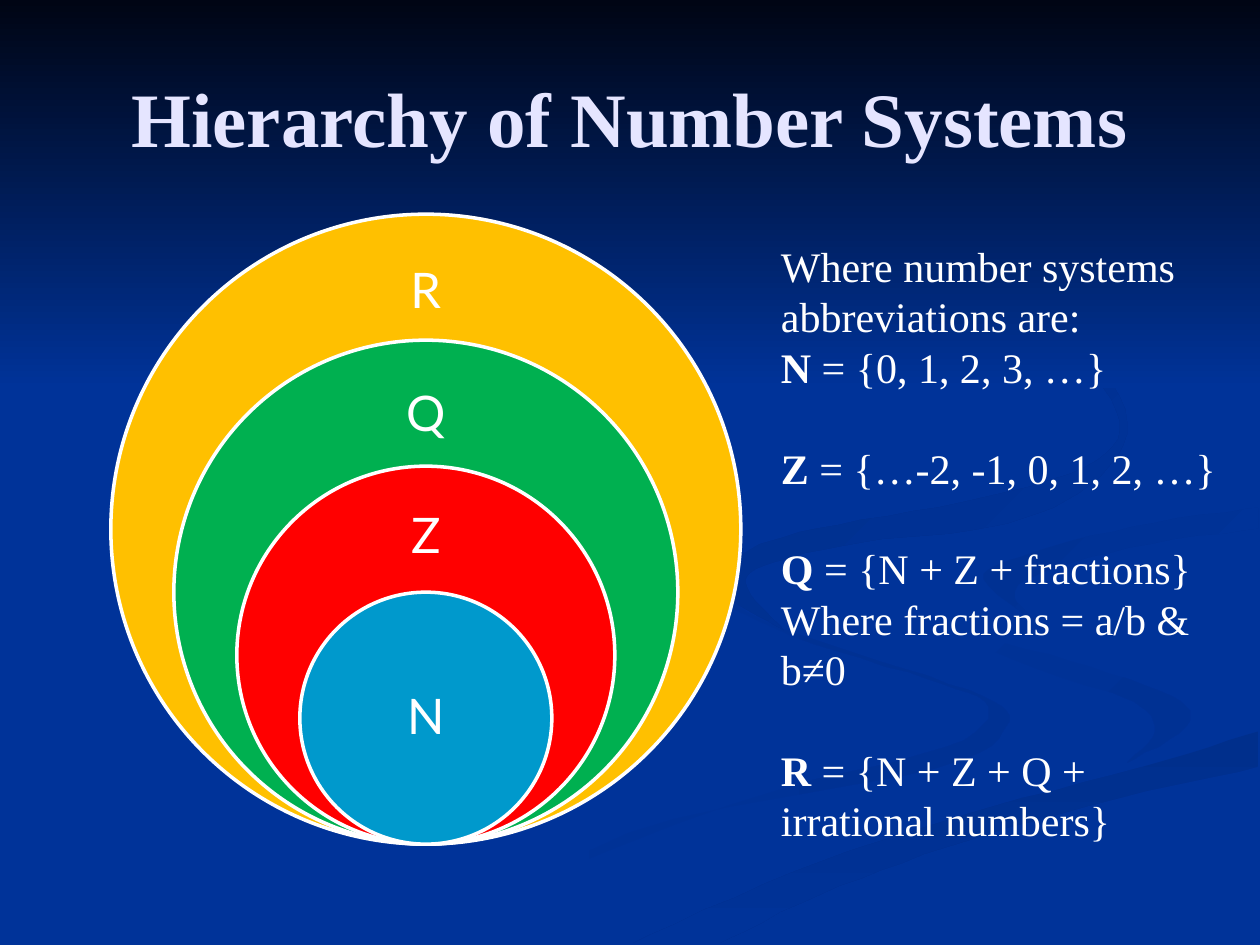
from pptx import Presentation
from pptx.dml.color import RGBColor as Rgb
from pptx.enum.shapes import MSO_SHAPE as Kind
from pptx.enum.text import MSO_ANCHOR as Anchor, PP_ALIGN as Align
from pptx.util import Pt

THEME = {
    "back": "003399", "night": "000514", "title": "E5E5FF", "text": "FFFFFF",
    "pale": "003193", "dark": "002F8C",
    "serif": "Times New Roman", "sans": "Lato",
    "head": 44, "mark": 28, "body": 24, "line": 28.8,
}

TITLE = "Hierarchy of Number Systems"

# name, fill, label centre below the top of its ring
RINGS = [("R", "FFC000", 45), ("Q", "00B050", 43.2),
         ("Z", "FF0000", 40.7), ("N", "0099CC", 72)]

# bold lead, rest, starts a new group
NOTES = [
    ("", "Where number systems abbreviations are:", False),
    ("N", " = {0, 1, 2, 3, …}", False),
    ("Z", " = {…-2, -1, 0, 1, 2, …}", True),
    ("Q", " = {N + Z + fractions}", True),
    ("", "Where fractions = a/b & b≠0", False),
    ("R", " = {N + Z + Q + irrational numbers}", True),
]

# first colour, last colour, angle, then two edges that run the same way
SWIRLS = [
    ("back", "pale", 0,
     [(414, 330), (427, 350), (491, 374), (562, 398), (575, 415), (535, 439),
      (359, 476), (260, 539)],
     [(414, 330), (412, 342), (454, 364), (530, 388), (565, 404), (540, 427),
      (417, 460), (216, 539)]),
    ("back", "pale", 45,
     [(521, 334), (537, 356), (612, 378), (670, 398), (678, 415), (644, 436)],
     [(521, 334), (532, 356), (603, 386), (648, 401), (660, 418), (644, 436)]),
    ("dark", "back", 90,
     [(362, 539), (454, 498), (550, 466), (650, 439), (719, 418)],
     [(411, 539), (469, 511), (541, 484), (620, 461), (719, 438)]),
    ("dark", "back", 45,
     [(549, 168), (623, 206), (644, 248), (616, 282), (566, 301), (492, 310),
      (437, 323), (427, 336), (448, 360)],
     [(549, 168), (609, 201), (640, 241), (620, 267), (550, 287), (467, 302),
      (424, 317), (418, 341), (448, 360)]),
    ("pale", "back", 45,
     [(719, 290), (647, 301), (584, 318), (562, 331), (595, 357)],
     [(719, 302), (645, 313), (590, 330), (580, 342), (595, 357)]),
    ("night", "back", 90, [(0, 0), (720, 0)], [(0, 222), (720, 222)]),
]


def tint(name):
    return Rgb.from_string(THEME.get(name, name))


def style(font, face, size, color):
    font.name = THEME[face]
    font.size = Pt(THEME[size])
    font.color.rgb = tint(color)


def curve(dots, parts=6):
    ends = [dots[0], *dots, dots[-1]]
    path = []
    for a, b, c, d in zip(ends, ends[1:], ends[2:], ends[3:]):
        for k in range(parts):
            t = k / parts
            path.append(tuple(
                q + t / 2 * (r - p + t * (2*p - 5*q + 4*r - s + t * (3*q - p - 3*r + s)))
                for p, q, r, s in zip(a, b, c, d)))
    return path + [dots[-1]]


def shade(shape, first, last, angle):
    shape.shadow.inherit = False
    shape.line.fill.background()
    shape.fill.gradient()
    shape.fill.gradient_angle = -angle % 360
    for stop, color in zip(shape.fill.gradient_stops, (first, last)):
        stop.color.rgb = tint(color)


def box(shapes, left, top, width, height):
    frame = shapes.add_textbox(Pt(left), Pt(top), Pt(width), Pt(height)).text_frame
    frame.word_wrap = True
    return frame


def main():
    deck = Presentation()
    deck.slide_width, deck.slide_height = Pt(720), Pt(540)
    slide = deck.slides.add_slide(deck.slide_layouts[5])
    shapes = slide.shapes
    slide.background.fill.solid()
    slide.background.fill.fore_color.rgb = tint("back")

    for first, last, angle, near, far in SWIRLS:
        dots = curve(near) + curve(far)[::-1]
        pen = shapes.build_freeform(*dots[0], scale=Pt(1))
        pen.add_line_segments(dots[1:], close=True)
        shade(pen.convert_to_shape(), first, last, angle)

    title = shapes.title
    shapes._spTree.append(title._element)
    title.left, title.top, title.width, title.height = Pt(36), Pt(21.6), Pt(648), Pt(90)
    frame = title.text_frame
    frame.text = TITLE
    frame.vertical_anchor = Anchor.MIDDLE
    para = frame.paragraphs[0]
    para.alignment = Align.CENTER
    para.font.bold = True
    style(para.font, "serif", "head", "title")

    mid, base, size, step, wide, high = 243.36, 482.4, 360, 72, 100, 50
    for i, (name, color, drop) in enumerate(RINGS):
        span = size - i * step
        top = base - span
        ring = shapes.add_shape(Kind.OVAL, Pt(mid - span / 2), Pt(top), Pt(span), Pt(span))
        ring.shadow.inherit = False
        ring.fill.solid()
        ring.fill.fore_color.rgb = tint(color)
        ring.line.color.rgb = tint("text")
        ring.line.width = Pt(2)
        frame = box(shapes, mid - wide / 2, top + drop - high / 2, wide, high)
        frame.vertical_anchor = Anchor.MIDDLE
        para = frame.paragraphs[0]
        para.text = name
        para.alignment = Align.CENTER
        para.line_spacing = 0.9
        style(para.font, "sans", "mark", "text")

    frame = box(shapes, 439.2, 133.92, 266.4, 356.4)
    for i, (lead, rest, gap) in enumerate(NOTES):
        para = frame.add_paragraph() if i else frame.paragraphs[0]
        style(para.font, "serif", "body", "text")
        para.line_spacing = Pt(THEME["line"])
        para.space_before = Pt(THEME["line"] if gap else 0)
        if lead:
            run = para.add_run()
            run.text = lead
            run.font.bold = True
        para.add_run().text = rest

    deck.save("out.pptx")


if __name__ == "__main__":
    main()
